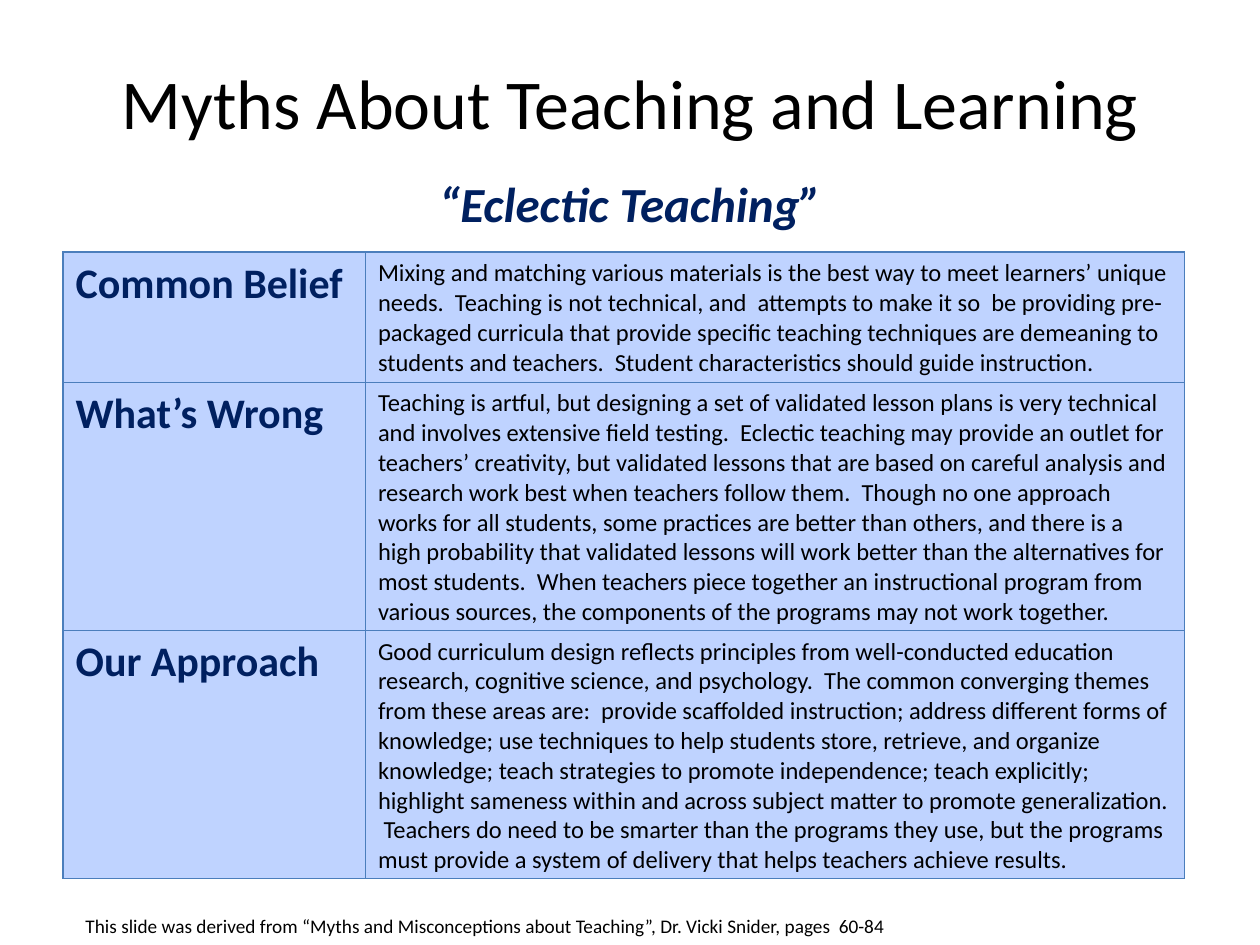
from dataclasses import dataclass

from lxml.etree import SubElement
from pptx import Presentation
from pptx.dml.color import RGBColor
from pptx.enum.text import MSO_ANCHOR, MSO_AUTO_SIZE, PP_ALIGN
from pptx.oxml.ns import qn
from pptx.slide import Slide
from pptx.table import _Cell
from pptx.text.text import TextFrame
from pptx.util import Inches, Pt

BLACK = RGBColor(0x00, 0x00, 0x00)
NAVY = RGBColor(0x00, 0x20, 0x60)
PALE_BLUE = RGBColor(0xBF, 0xD3, 0xFF)
BORDER_BLUE = RGBColor(0x4B, 0x7E, 0xBC)
FONT = "Calibri"
BORDER_WIDTH = Pt(0.75)
COLUMN_WIDTHS = (2.4, 6.5)


@dataclass(frozen=True)
class TextStyle:
    size: float
    color: RGBColor = BLACK
    bold: bool = False
    italic: bool = False
    align: PP_ALIGN = PP_ALIGN.LEFT


@dataclass(frozen=True)
class MythRow:
    heading: str
    detail: str
    height: float


TITLE = TextStyle(40, align=PP_ALIGN.CENTER)
MYTH_NAME = TextStyle(28, NAVY, bold=True, italic=True, align=PP_ALIGN.CENTER)
HEADING = TextStyle(24, NAVY, bold=True)
DETAIL = TextStyle(14)
CITATION = TextStyle(11)

MYTH_ROWS = (
    MythRow(
        "Common Belief",
        "Mixing and matching various materials is the best way to meet learners’ "
        "unique needs.  Teaching is not technical, and  attempts to make it so  be "
        "providing pre-packaged curricula that provide specific teaching techniques "
        "are demeaning to students and teachers.  Student characteristics should "
        "guide instruction.",
        1.03,
    ),
    MythRow(
        "What’s Wrong",
        "Teaching is artful, but designing a set of validated lesson plans is very "
        "technical and involves extensive field testing.  Eclectic teaching may "
        "provide an outlet for teachers’ creativity, but validated lessons that are "
        "based on careful analysis and research work best when teachers follow them.  "
        "Though no one approach works for all students, some practices are better "
        "than others, and there is a high probability that validated lessons will "
        "work better than the alternatives for most students.  When teachers piece "
        "together an instructional program from various sources, the components of "
        "the programs may not work together.",
        1.97,
    ),
    MythRow(
        "Our Approach",
        "Good curriculum design reflects principles from well-conducted education "
        "research, cognitive science, and psychology.  The common converging themes "
        "from these areas are:  provide scaffolded instruction; address different "
        "forms of knowledge; use techniques to help students store, retrieve, and "
        "organize knowledge; teach strategies to promote independence; teach "
        "explicitly; highlight sameness within and across subject matter to promote "
        "generalization.  Teachers do need to be smarter than the programs they use, "
        "but the programs must provide a system of delivery that helps teachers "
        "achieve results.",
        1.97,
    ),
)


def write_text(frame: TextFrame, text: str, style: TextStyle) -> None:
    paragraph = frame.paragraphs[0]
    paragraph.alignment = style.align
    run = paragraph.add_run()
    run.text = text
    run.font.name = FONT
    run.font.size = Pt(style.size)
    run.font.bold = style.bold
    run.font.italic = style.italic
    run.font.color.rgb = style.color


def add_title(slide: Slide, text: str) -> None:
    title = slide.shapes.title
    title.left, title.top = Inches(0), Inches(0)
    title.width, title.height = Inches(10), Inches(1.61)
    title.text_frame.auto_size = MSO_AUTO_SIZE.NONE
    title.text_frame.vertical_anchor = MSO_ANCHOR.MIDDLE
    write_text(title.text_frame, text, TITLE)


def add_caption(slide: Slide, text: str, style: TextStyle,
                left: float, top: float, width: float, height: float) -> None:
    caption = slide.shapes.add_textbox(
        Inches(left), Inches(top), Inches(width), Inches(height))
    caption.text_frame.word_wrap = True
    caption.text_frame.auto_size = MSO_AUTO_SIZE.SHAPE_TO_FIT_TEXT
    write_text(caption.text_frame, text, style)


def format_cell(cell: _Cell) -> None:
    properties = cell._tc.get_or_add_tcPr()
    for side in ("a:lnL", "a:lnR", "a:lnT", "a:lnB"):
        line = SubElement(properties, qn(side), w=str(BORDER_WIDTH))
        fill = SubElement(line, qn("a:solidFill"))
        SubElement(fill, qn("a:srgbClr"), val=str(BORDER_BLUE))
    cell.fill.solid()
    cell.fill.fore_color.rgb = PALE_BLUE


def add_myth_table(slide: Slide, rows: tuple[MythRow, ...]) -> None:
    table = slide.shapes.add_table(
        len(rows), len(COLUMN_WIDTHS), Inches(0.5), Inches(2),
        Inches(sum(COLUMN_WIDTHS)), Inches(sum(row.height for row in rows))).table
    table.first_row = False
    table.horz_banding = False
    for column, width in zip(table.columns, COLUMN_WIDTHS):
        column.width = Inches(width)
    for table_row, myth in zip(table.rows, rows):
        table_row.height = Inches(myth.height)
        contents = ((myth.heading, HEADING), (myth.detail, DETAIL))
        for cell, (text, style) in zip(table_row.cells, contents):
            format_cell(cell)
            write_text(cell.text_frame, text, style)


def main() -> None:
    presentation = Presentation()
    presentation.slide_width = Inches(10)
    presentation.slide_height = Inches(7.5)
    slide = presentation.slides.add_slide(
        presentation.slide_layouts.get_by_name("Title Only"))
    add_title(slide, "Myths About Teaching and Learning")
    add_caption(slide, "“Eclectic Teaching”", MYTH_NAME, 0.25, 1.33, 9.5, 0.57)
    add_myth_table(slide, MYTH_ROWS)
    add_caption(
        slide,
        "This slide was derived from “Myths and Misconceptions about Teaching”, "
        "Dr. Vicki Snider, pages  60-84",
        CITATION, 0.58, 7.21, 8.83, 0.29)
    presentation.save("out.pptx")


if __name__ == "__main__":
    main()
